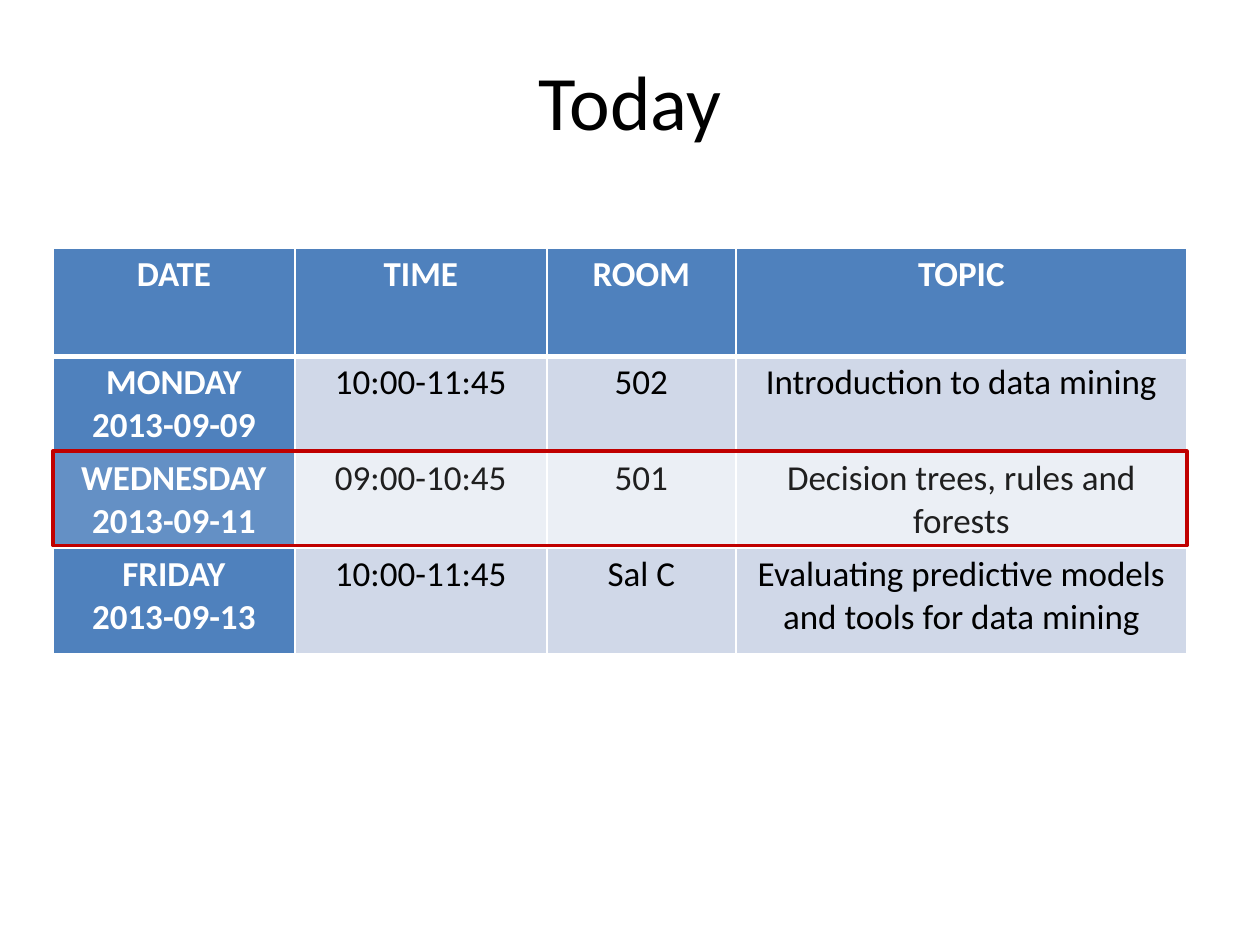
from dataclasses import dataclass

from lxml.etree import SubElement
from pptx import Presentation
from pptx.dml.color import RGBColor
from pptx.enum.shapes import MSO_SHAPE
from pptx.enum.text import MSO_ANCHOR, PP_ALIGN
from pptx.oxml import parse_xml
from pptx.oxml.ns import nsdecls, qn
from pptx.util import Inches, Pt


@dataclass(frozen=True)
class Theme:
    font: str = "Calibri"
    title_size: int = 44
    table_size: int = 20
    text: str = "000000"
    light: str = "FFFFFF"
    header: str = "4F81BD"
    bands: tuple = ("D0D8E8", "E9EDF4")
    highlight: str = "C00000"
    highlight_opacity: int = 12
    thin_border: int = 1
    header_border: int = 3


THEME = Theme()
COLUMN_WIDTHS = (1.92, 2, 1.5, 3.58)
ROW_HEIGHTS = (0.86, 0.76, 0.76, 0.84)
CELL_MARGIN = 0.04
SCHEDULE = (
    ("DATE", "TIME", "ROOM", "TOPIC"),
    ("MONDAY\n2013-09-09", "10:00-11:45", "502", "Introduction to data mining"),
    ("WEDNESDAY\n2013-09-11", "09:00-10:45", "501", "Decision trees, rules and forests"),
    ("FRIDAY\n2013-09-13", "10:00-11:45", "Sal C",
     "Evaluating predictive models and tools for data mining"),
)


def write_text(text_frame, text, size, color, bold=False):
    text_frame.text = text
    for paragraph in text_frame.paragraphs:
        paragraph.alignment = PP_ALIGN.CENTER
        for run in paragraph.runs:
            run.font.name = THEME.font
            run.font.size = Pt(size)
            run.font.bold = bold
            run.font.color.rgb = RGBColor.from_string(color)


def add_title(slide, text, left, top, width, height):
    title = slide.shapes.title
    title.left, title.top = Inches(left), Inches(top)
    title.width, title.height = Inches(width), Inches(height)
    title.text_frame.vertical_anchor = MSO_ANCHOR.MIDDLE
    write_text(title.text_frame, text, THEME.title_size, THEME.text)


def set_borders(cell, widths):
    properties = cell._tc.get_or_add_tcPr()
    for position, (side, width) in enumerate(widths.items()):
        border = parse_xml(
            f'<a:ln{side} {nsdecls("a")} w="{Pt(width)}"><a:solidFill>'
            f'<a:srgbClr val="{THEME.light}"/></a:solidFill></a:ln{side}>'
        )
        properties.insert(position, border)


def format_cell(cell, text, row, column):
    is_header = row == 0 or column == 0
    fill_color = THEME.header if is_header else THEME.bands[(row - 1) % 2]
    cell.fill.solid()
    cell.fill.fore_color.rgb = RGBColor.from_string(fill_color)
    cell.margin_left = cell.margin_right = Inches(CELL_MARGIN)
    cell.margin_top = cell.margin_bottom = Inches(CELL_MARGIN)
    text_color = THEME.light if is_header else THEME.text
    write_text(cell.text_frame, text, THEME.table_size, text_color, is_header)
    set_borders(cell, {
        "L": THEME.thin_border,
        "R": THEME.thin_border,
        "T": THEME.header_border if row == 1 else THEME.thin_border,
        "B": THEME.header_border if row == 0 else THEME.thin_border,
    })


def add_schedule(slide, left, top, width, height):
    table = slide.shapes.add_table(
        len(SCHEDULE), len(COLUMN_WIDTHS),
        Inches(left), Inches(top), Inches(width), Inches(height),
    ).table
    for column, column_width in zip(table.columns, COLUMN_WIDTHS):
        column.width = Inches(column_width)
    for row, row_height in zip(table.rows, ROW_HEIGHTS):
        row.height = Inches(row_height)
    for row, texts in enumerate(SCHEDULE):
        for column, text in enumerate(texts):
            format_cell(table.cell(row, column), text, row, column)


def add_highlight(slide, left, top, width, height):
    shape = slide.shapes.add_shape(
        MSO_SHAPE.RECTANGLE, Inches(left), Inches(top), Inches(width), Inches(height)
    )
    shape.shadow.inherit = False
    shape.fill.solid()
    shape.fill.fore_color.rgb = RGBColor.from_string(THEME.light)
    color = shape.fill._xPr.find(qn("a:solidFill"))[0]
    SubElement(color, qn("a:alpha"), val=str(THEME.highlight_opacity * 1000))
    shape.line.color.rgb = RGBColor.from_string(THEME.highlight)
    shape.line.width = Pt(2)


def main():
    presentation = Presentation()
    presentation.slide_width = Inches(10)
    presentation.slide_height = Inches(7.5)
    slide = presentation.slides.add_slide(presentation.slide_layouts[5])
    add_title(slide, "Today", 0.5, 0.17, 9, 1.25)
    left, top, width = 0.42, 1.97, sum(COLUMN_WIDTHS)
    add_schedule(slide, left, top, width, sum(ROW_HEIGHTS))
    add_highlight(slide, left, top + sum(ROW_HEIGHTS[:2]) - 0.01, width, 0.75)
    presentation.save("out.pptx")


if __name__ == "__main__":
    main()
